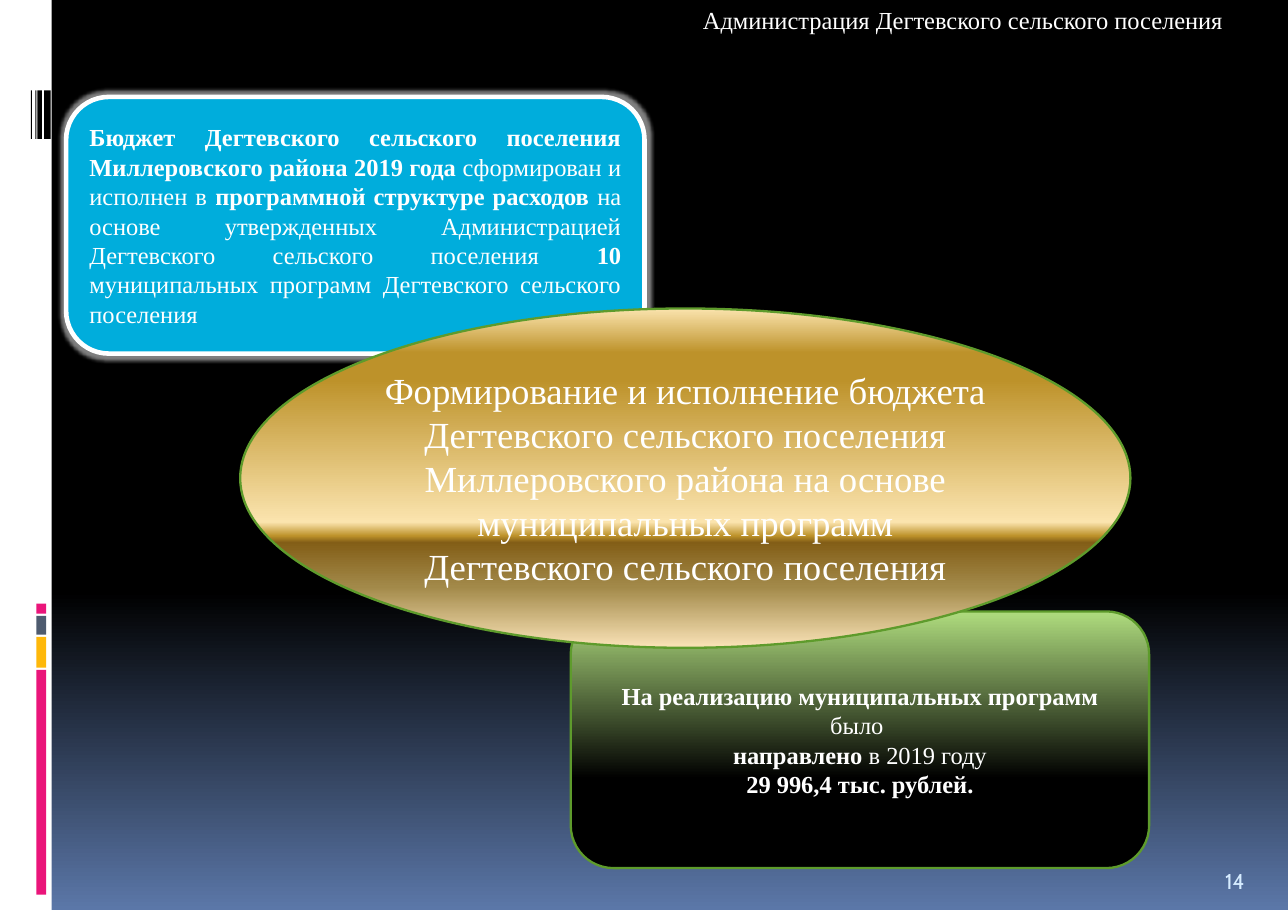
from dataclasses import dataclass

from lxml import etree
from pptx import Presentation
from pptx.dml.color import RGBColor
from pptx.enum.shapes import MSO_SHAPE
from pptx.enum.text import MSO_ANCHOR, MSO_AUTO_SIZE, PP_ALIGN
from pptx.oxml.ns import qn
from pptx.util import Inches, Pt

RECTANGLE, ROUNDED, OVAL = MSO_SHAPE.RECTANGLE, MSO_SHAPE.ROUNDED_RECTANGLE, MSO_SHAPE.OVAL
TOP, MIDDLE, BOTTOM = MSO_ANCHOR.TOP, MSO_ANCHOR.MIDDLE, MSO_ANCHOR.BOTTOM
LEFT, CENTER, JUSTIFY = PP_ALIGN.LEFT, PP_ALIGN.CENTER, PP_ALIGN.JUSTIFY
TITLE_ONLY = 5


@dataclass(frozen=True)
class Theme:
    serif: str = "Times New Roman"
    sans: str = "Cabin"
    body_size: int = 16
    center_size: int = 24
    number_size: int = 14
    white: str = "FFFFFF"
    black: str = "000000"
    pink: str = "EA157A"
    yellow: str = "FEB80A"
    slate: str = "4E5B6F"
    blue: str = "00ADDC"
    green: str = "5E9B2C"
    pale_blue: str = "D6ECFF"
    night: tuple = ((0, "000000"), (65, "000000"), (100, "5B77A8"))
    leaf: tuple = ((0, "AFDC7E"), (65, "000000"), (100, "000000"))
    gold: tuple = ((0, "FBE4AE"), (13, "BD922A"), (21, "BD922A"), (63, "FBE4AE"),
                   (67, "BD922A"), (69, "835E17"), (82, "A28949"), (100, "FAE3B7"))


THEME = Theme()

# Each paragraph is a list of (text, bold) runs.
HEADER = [[("Администрация Дегтевского сельского поселения", False)]]
SPENDING = [
    [("На реализацию муниципальных программ ", True), ("было ", False)],
    [("направлено", True), (" в 2019 году", False)],
    [("29 996,4 тыс. рублей.", True)],
]
BUDGET = [[
    ("Бюджет Дегтевского сельского поселения Миллеровского района 2019 года ", True),
    ("сформирован и исполнен в ", False),
    ("программной структуре расходов", True),
    (" на основе утвержденных Администрацией Дегтевского сельского поселения ", False),
    ("10", True),
    (" муниципальных программ Дегтевского сельского поселения", False),
]]
TOPIC = [[("Формирование и исполнение бюджета Дегтевского сельского поселения "
           "Миллеровского района на основе муниципальных программ "
           "Дегтевского сельского поселения", False)]]
SLIDE_NUMBER = [[("14", False)]]

SLIDE_SIZE = (11.69, 8.26)
CARD_SIZE = (5.25, 2.33)
SIDEBAR_WIDTH = 0.47
# Coloured blocks stack upwards from the bottom: (height, colour)
BLOCKS = [(2.04, THEME.pink), (0.28, THEME.yellow), (0.17, THEME.slate), (0.09, THEME.pink)]
BLOCK_LEFT, BLOCK_WIDTH, BLOCK_BOTTOM, BLOCK_GAP = 0.33, 0.09, 8.12, 0.02
# Black stripes: (left, width)
STRIPES = [(0.4, 0.06), (0.34, 0.04), (0.32, 0.01), (0.28, 0.01)]
STRIPE_TOP, STRIPE_HEIGHT = 0.82, 0.44


def set_gradient(fill, owner, stops):
    """Fill from top to bottom with (percent, colour) stops; owner holds the fill's XML."""
    fill.gradient()
    fill.gradient_angle = 270
    stop_list = next(owner.iter(qn("a:gsLst")))
    for stop in list(stop_list):
        stop_list.remove(stop)
    for percent, color in stops:
        stop = etree.SubElement(stop_list, qn("a:gs"), pos=str(percent * 1000))
        etree.SubElement(stop, qn("a:srgbClr"), val=color)


def add_glow(shape, color, radius, opacity):
    effects = shape._element.spPr.find(qn("a:effectLst"))
    glow = etree.SubElement(effects, qn("a:glow"), rad=str(Pt(radius)))
    glow_color = etree.SubElement(glow, qn("a:srgbClr"), val=color)
    etree.SubElement(glow_color, qn("a:alpha"), val=str(opacity * 1000))


def add_figure(slide, kind, box, fill, line=None, line_width=1.5):
    """Add a preset shape; fill is one colour or a tuple of gradient stops."""
    shape = slide.shapes.add_shape(kind, *map(Inches, box))
    shape.shadow.inherit = False
    if isinstance(fill, str):
        shape.fill.solid()
        shape.fill.fore_color.rgb = RGBColor.from_string(fill)
    else:
        set_gradient(shape.fill, shape._element, fill)
    if line:
        shape.line.color.rgb = RGBColor.from_string(line)
        shape.line.width = Pt(line_width)
    else:
        shape.line.fill.background()
    return shape


def write_text(shape, paragraphs, size=THEME.body_size, font=THEME.serif, color=THEME.white,
               align=CENTER, anchor=MIDDLE, margins=(0.1, 0.05)):
    frame = shape.text_frame
    frame.word_wrap = True
    frame.auto_size = MSO_AUTO_SIZE.NONE
    frame.vertical_anchor = anchor
    frame.margin_left = frame.margin_right = Inches(margins[0])
    frame.margin_top = frame.margin_bottom = Inches(margins[1])
    for index, runs in enumerate(paragraphs):
        paragraph = frame.add_paragraph() if index else frame.paragraphs[0]
        paragraph.alignment = align
        for text, bold in runs:
            run = paragraph.add_run()
            run.text = text
            run.font.name = font
            run.font.size = Pt(size)
            run.font.bold = bold
            run.font.color.rgb = RGBColor.from_string(color)


def add_sidebar(slide):
    add_figure(slide, RECTANGLE, (0, 0, SIDEBAR_WIDTH, SLIDE_SIZE[1]), THEME.white)
    bottom = BLOCK_BOTTOM
    for height, color in BLOCKS:
        add_figure(slide, RECTANGLE, (BLOCK_LEFT, bottom - height, BLOCK_WIDTH, height), color)
        bottom -= height + BLOCK_GAP
    for left, width in STRIPES:
        add_figure(slide, RECTANGLE, (left, STRIPE_TOP, width, STRIPE_HEIGHT), THEME.black)


def main():
    presentation = Presentation()
    presentation.slide_width, presentation.slide_height = map(Inches, SLIDE_SIZE)
    slide = presentation.slides.add_slide(presentation.slide_layouts[TITLE_ONLY])
    set_gradient(slide.background.fill, slide._element, THEME.night)

    title = slide.shapes.title
    title.left, title.top, title.width, title.height = map(Inches, (6.28, 0, 5.41, 0.37))
    write_text(title, HEADER, align=LEFT, anchor=TOP)

    add_sidebar(slide)

    spending = add_figure(slide, ROUNDED, (5.18, 5.55, *CARD_SIZE), THEME.leaf, THEME.green)
    write_text(spending, SPENDING)

    budget = add_figure(slide, ROUNDED, (0.6, 0.88, *CARD_SIZE), THEME.blue, THEME.white, 3)
    add_glow(budget, THEME.white, radius=5, opacity=50)
    write_text(budget, BUDGET, align=JUSTIFY)

    topic = add_figure(slide, OVAL, (2.18, 2.8, 8.08, 3.08), THEME.gold, THEME.green)
    write_text(topic, TOPIC, size=THEME.center_size)

    number = slide.shapes.add_textbox(*map(Inches, (11.01, 7.73, 0.58, 0.44)))
    write_text(number, SLIDE_NUMBER, size=THEME.number_size, font=THEME.sans,
               color=THEME.pale_blue, align=LEFT, anchor=BOTTOM, margins=(0.11, 0.06))

    presentation.save("out.pptx")


if __name__ == "__main__":
    main()
